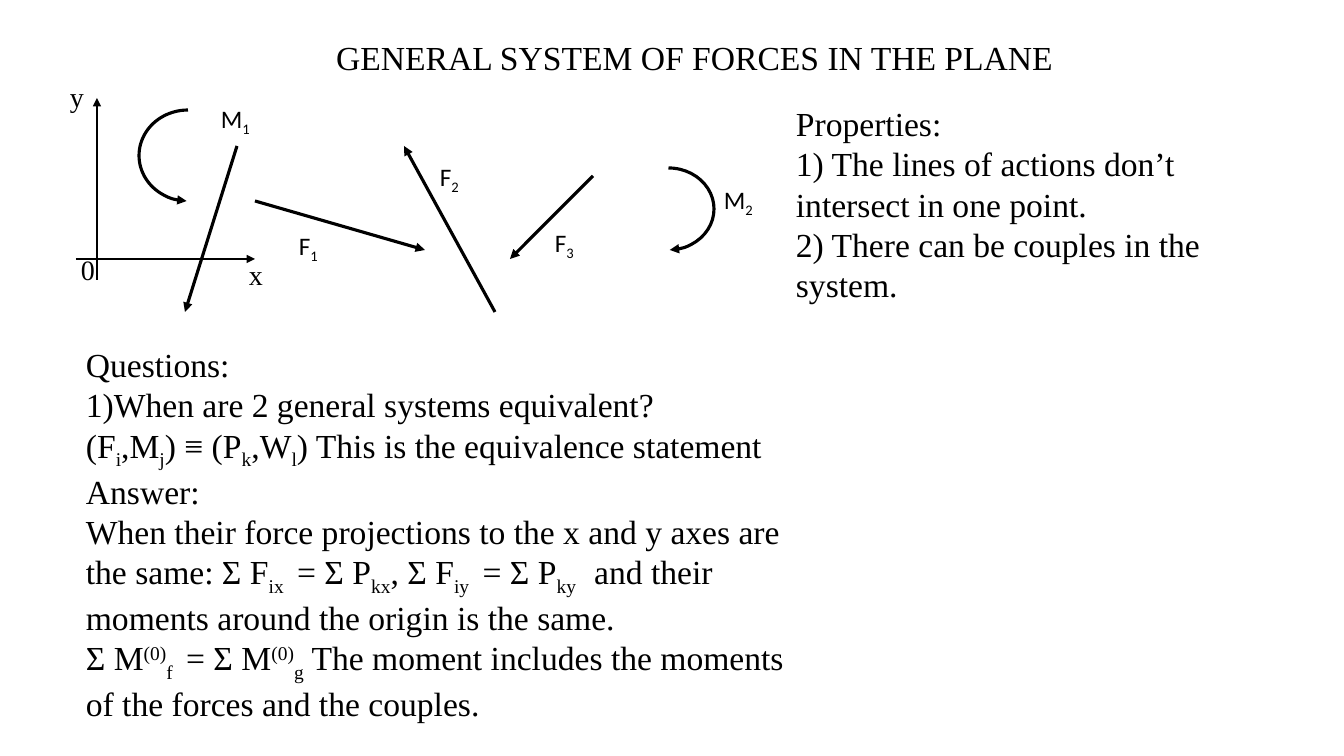
from pptx import Presentation, util as u
from pptx.dml.color import RGBColor
from pptx.enum import shapes, text
from pptx.oxml.ns import qn
from lxml import etree

# Content: a run is a plain string or a (string, baseline) pair
SERIF, SANS = "Times New Roman", "Calibri"
BLACK = "000000"
SUB, SUP = -25000, 30000

TITLE = "GENERAL SYSTEM OF FORCES IN THE PLANE"
TITLE_BOX = (326, 32, 770, 50)

PROPERTIES = [
    ["Properties:"],
    ["1) The lines of actions don’t intersect in one point."],
    ["2) There can be couples in the system."],
]
QUESTIONS = [
    ["Questions:"],
    ["1)When are 2 general systems equivalent?"],
    ["(F", ("i", SUB), ",M", ("j", SUB), ") ≡ (P", ("k", SUB), ",W", ("l", SUB),
     ") This is the equivalence statement"],
    ["Answer:"],
    ["When their force projections to the x and y axes are the same: Σ F",
     ("ix ", SUB), " = Σ P", ("kx", SUB), ", Σ F", ("iy ", SUB), " = Σ P",
     ("ky  ", SUB), " and their moments around the origin is the same."],
    ["Σ M", ("(0)", SUP), ("f ", SUB), " = Σ M", ("(0)", SUP), ("g", SUB),
     " The moment includes the moments of the forces and the couples."],
]
BODY_BOXES = [(PROPERTIES, (786, 98, 495, 214)), (QUESTIONS, (76, 339, 741, 417))]

# Arrows: x1, y1, x2, y2
FORCES = [(237, 146, 185, 312), (255, 201, 425, 250),
          (495, 312, 404, 146), (593, 176, 510, 259)]
AXES = [(97, 280, 97, 98), (76, 259, 255, 259)]
FORCE_WIDTH, AXIS_WIDTH = 2.25, 0.75

# Couples: box, mirrored
COUPLES = [((623, 168, 91, 82), False), ((139, 110, 98, 91), True)]
ARC_ANGLES = (162, 52.96)

# Labels: letter, index, left, top
VECTOR_LABELS = [("M", "1", 211, 98), ("M", "2", 714, 179), ("F", "1", 289, 225),
                 ("F", "2", 430, 156), ("F", "3", 545, 222)]
AXIS_LABELS = [("x", 239, 253), ("y", 60, 75), ("0", 71, 248)]

SLIDE_W, SLIDE_H = 1344, 756
SCALE = 12192000 / SLIDE_W


def px(*lengths):
    return [u.Emu(round(n * SCALE)) for n in lengths]


def color(hex_string):
    return RGBColor.from_string(hex_string)


def write(tf, paragraphs, size, font):
    tf.word_wrap = True
    tf.vertical_anchor = text.MSO_ANCHOR.TOP
    for i, runs in enumerate(paragraphs):
        p = tf.add_paragraph() if i else tf.paragraphs[0]
        p.alignment = text.PP_ALIGN.LEFT
        for run in runs:
            words, baseline = (run, 0) if isinstance(run, str) else run
            r = p.add_run()
            r.text = words
            r.font.size = u.Pt(size)
            r.font.name = font
            r.font.color.rgb = color(BLACK)
            if baseline:
                r.font._element.set("baseline", str(baseline))


def add_text(s, box, paragraphs, size, font):
    tf = s.shapes.add_textbox(*px(*box)).text_frame
    write(tf, paragraphs, size, font)
    tf.auto_size = text.MSO_AUTO_SIZE.SHAPE_TO_FIT_TEXT


def style_arrow(sp, width):
    sp.line.color.rgb = color(BLACK)
    sp.line.width = u.Pt(width)
    etree.SubElement(sp.line._get_or_add_ln(), qn("a:tailEnd"), type="triangle")


def add_arrow(s, ends, width):
    sp = s.shapes.add_connector(shapes.MSO_CONNECTOR.STRAIGHT, *px(*ends))
    style_arrow(sp, width)
    etree.SubElement(sp._element.spPr, qn("a:effectLst"))


def add_couple(s, box, mirrored):
    sp = s.shapes.add_shape(shapes.MSO_SHAPE.ARC, *px(*box))
    sp.shadow.inherit = False
    sp.fill.background()
    for i, angle in enumerate(ARC_ANGLES):
        sp.adjustments[i] = angle
    if mirrored:
        sp._element.spPr.find(qn("a:xfrm")).set("flipH", "1")
    style_arrow(sp, FORCE_WIDTH)


def main():
    prs = Presentation()
    prs.slide_width, prs.slide_height = px(SLIDE_W, SLIDE_H)
    s = prs.slides.add_slide(prs.slide_layouts[5])

    # Title
    title = s.shapes.title
    title.left, title.top, title.width, title.height = px(*TITLE_BOX)
    write(title.text_frame, [[TITLE]], 24, SERIF)
    title.text_frame.auto_size = text.MSO_AUTO_SIZE.NONE

    # Forces and couples
    for ends in FORCES:
        add_arrow(s, ends, FORCE_WIDTH)
    for box, mirrored in COUPLES:
        add_couple(s, box, mirrored)
    for letter, index, left, top in VECTOR_LABELS:
        add_text(s, (left, top, 73, 40), [[letter, (index, SUB)]], 18, SANS)

    # Properties and questions
    for paragraphs, box in BODY_BOXES:
        add_text(s, box, paragraphs, 24, SERIF)

    # Coordinate axes
    for ends in AXES:
        add_arrow(s, ends, AXIS_WIDTH)
    for name, left, top in AXIS_LABELS:
        add_text(s, (left, top, 42, 44), [[name]], 20, SERIF)

    prs.save("out.pptx")


if __name__ == "__main__":
    main()
